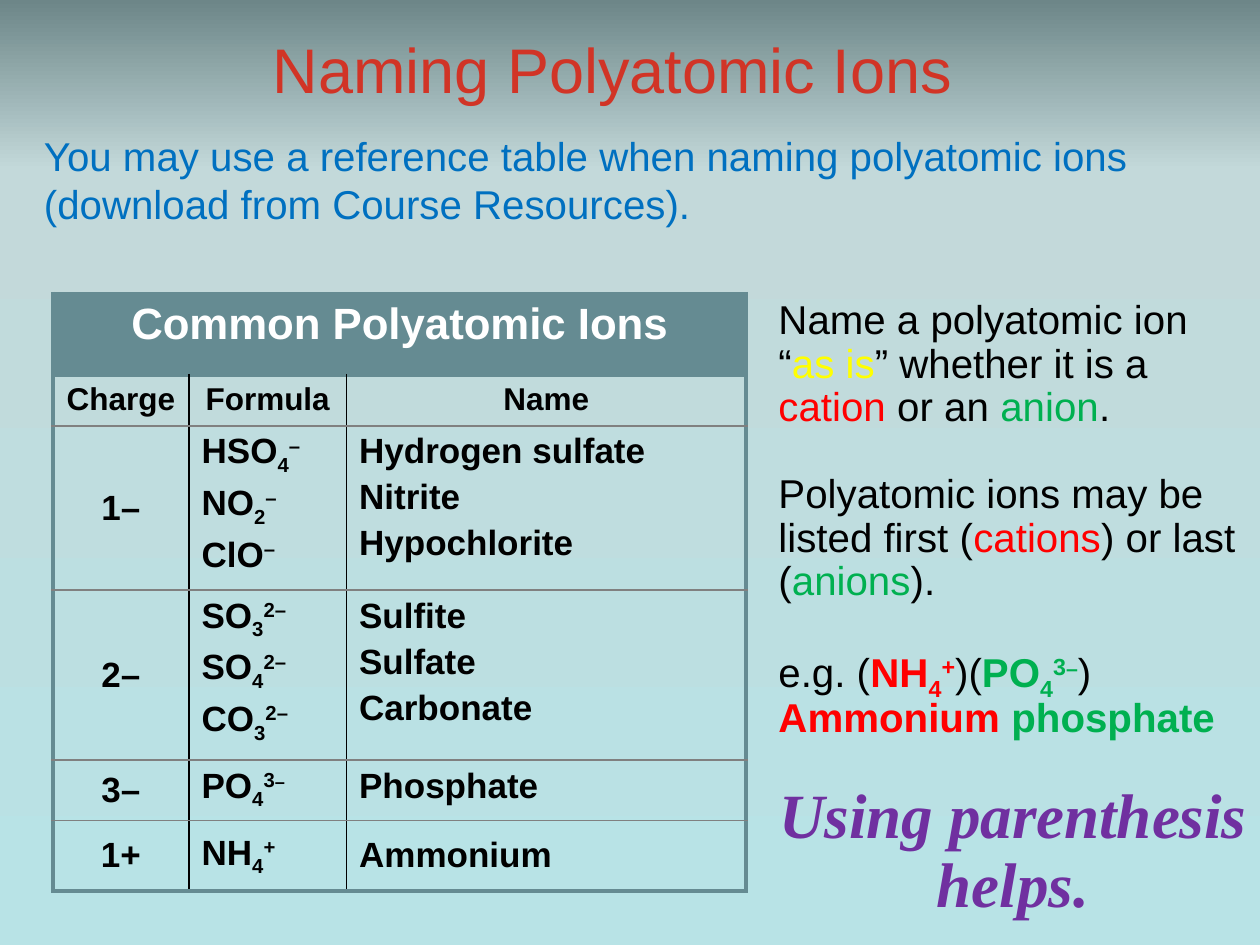
from copy import deepcopy

from pptx import Presentation
from pptx.dml.color import RGBColor
from pptx.enum.text import MSO_ANCHOR, PP_ALIGN
from pptx.oxml.ns import qn
from pptx.oxml.xmlchemy import OxmlElement
from pptx.util import Inches, Pt

COLORS = {
    "title": "D13426", "intro": "0070C0", "text": "000000", "white": "FFFFFF",
    "as_is": "FFFF00", "cation": "FF0000", "anion": "00B050", "tip": "7030A0",
    "frame": "658B92", "rule": "808080",
}
BACKGROUND = [(0, "6D8688"), (0.18, "C3D9DA"), (1, "B8E3E6")]
SUB, SUP = -25, 30
CENTER, LEFT = PP_ALIGN.CENTER, PP_ALIGN.LEFT

COLUMNS = [1.08, 1.25, 3.17]
ROWS = [0.65, 0.4, 1.23, 1.23, 0.43, 0.56]
HEADINGS = ["Charge", "Formula", "Name"]
# Charge, then (base, subscript, superscript parts) and name of each ion
IONS = [
    ("1–", [("HSO", "4", "–"), ("NO", "2", "–"), ("ClO", "", "–")],
     ["Hydrogen sulfate", "Nitrite", "Hypochlorite"]),
    ("2–", [("SO", "3", "2–"), ("SO", "4", "2–"), ("CO", "3", "2–")],
     ["Sulfite", "Sulfate", "Carbonate"]),
    ("3–", [("PO", "4", "3", "–")], ["Phosphate"]),
    ("1+", [("NH", "4", "+")], ["Ammonium"]),
]


def add_run(p, text, size, color="text", bold=False, italic=False, base=0, font="Arial"):
    r = p.add_run()
    r.text = text
    r.font.name = font
    r.font.size = Pt(size)
    r.font.bold = bold
    r.font.italic = italic
    r.font.color.rgb = RGBColor.from_string(COLORS[color])
    if base:
        r.font._element.set("baseline", str(base * 1000))


def add_formula(p, parts, size, sign_size, color="text"):
    symbol, count, charge, *sign = parts
    add_run(p, symbol, size, color, bold=True)
    if count:
        add_run(p, count, size, color, bold=True, base=SUB)
    add_run(p, charge, size, color, bold=True, base=SUP)
    for text in sign:
        add_run(p, text, sign_size, color, bold=True, base=SUP)


def next_paragraph(tf, align=LEFT):
    p = tf.paragraphs[0] if not tf.paragraphs[0].runs else tf.add_paragraph()
    p.alignment = align
    return p


def add_text_box(slide, left, top, width, height, anchor=MSO_ANCHOR.TOP):
    box = slide.shapes.add_textbox(Inches(left), Inches(top), Inches(width), Inches(height))
    tf = box.text_frame
    tf.word_wrap = True
    tf.vertical_anchor = anchor
    return tf


def set_background(slide):
    fill = slide.background.fill
    fill.gradient()
    fill.gradient_angle = 270
    stop_list = slide.element.find(".//" + qn("a:gsLst"))
    stop_list.append(deepcopy(stop_list[-1]))
    for stop, (position, color) in zip(fill.gradient_stops, BACKGROUND):
        stop.position = position
        stop.color.rgb = RGBColor.from_string(color)


def set_borders(cell, **sides):
    """Draw each side, given as (colour, width), in left-right-top-bottom order."""
    tc_pr = cell._tc.get_or_add_tcPr()
    for index, side in enumerate("LRTB"):
        color, width = sides[side]
        ln = OxmlElement(f"a:ln{side}")
        ln.set("w", str(Pt(width)))
        fill = OxmlElement("a:solidFill")
        rgb = OxmlElement("a:srgbClr")
        rgb.set("val", COLORS[color])
        fill.append(rgb)
        ln.append(fill)
        tc_pr.insert(index, ln)


def cell_paragraph(cell, align=LEFT):
    """Start a paragraph with a fifth of a line above it."""
    p = next_paragraph(cell.text_frame, align)
    space = OxmlElement("a:spcBef")
    percent = OxmlElement("a:spcPct")
    percent.set("val", "20000")
    space.append(percent)
    p._p.get_or_add_pPr().append(space)
    return p


def style_cells(table):
    frame, column, rule = ("frame", 2.25), ("text", 1), ("rule", 1)
    last_row, last_col = len(ROWS) - 1, len(COLUMNS) - 1
    for row in range(len(ROWS)):
        for col in range(len(COLUMNS)):
            cell = table.cell(row, col)
            if row == 0:
                cell.fill.solid()
                cell.fill.fore_color.rgb = RGBColor.from_string(COLORS["frame"])
                set_borders(cell, L=frame, R=frame, T=frame, B=frame)
                continue
            cell.fill.background()
            set_borders(cell,
                        L=frame if col == 0 else column,
                        R=frame if col == last_col else column,
                        T=frame if row == 1 else rule,
                        B=frame if row == last_row else rule)
            if row > 1 and (col == 0 or row == last_row):
                cell.vertical_anchor = MSO_ANCHOR.MIDDLE


def add_ion_table(slide):
    shape = slide.shapes.add_table(len(ROWS), len(COLUMNS), Inches(0.42), Inches(2.33),
                                   Inches(sum(COLUMNS)), Inches(sum(ROWS)))
    table = shape.table
    table.first_row = table.horz_banding = False
    for column, width in zip(table.columns, COLUMNS):
        column.width = Inches(width)
    for row, height in zip(table.rows, ROWS):
        row.height = Inches(height)
    style_cells(table)

    # Heading rows
    table.cell(0, 0).merge(table.cell(0, 2))
    add_run(cell_paragraph(table.cell(0, 0), CENTER), "Common Polyatomic Ions",
            25, "white", bold=True)
    for col, heading in enumerate(HEADINGS):
        add_run(cell_paragraph(table.cell(1, col), CENTER), heading, 18, bold=True)

    # One row per charge
    for row, (charge, formulas, names) in enumerate(IONS, start=2):
        add_run(cell_paragraph(table.cell(row, 0), CENTER), charge, 20, bold=True)
        for parts in formulas:
            add_formula(cell_paragraph(table.cell(row, 1)), parts, 20, 18)
        for name in names:
            add_run(cell_paragraph(table.cell(row, 2)), name, 20, bold=True)


def add_notes_column(slide):
    tf = add_text_box(slide, 6.08, 2.33, 3.92, 5.08)
    size, gap = 23, 25

    def paragraph(before=0, align=LEFT):
        p = next_paragraph(tf, align)
        p.line_spacing = 0.9
        p.space_before = Pt(before)
        return p

    def add_sentence(p, *runs):
        for text, color in runs:
            add_run(p, text, size, color)

    add_sentence(paragraph(), ("Name a polyatomic ion “", "text"), ("as is", "as_is"),
                 ("” whether it is a ", "text"), ("cation", "cation"),
                 (" or an ", "text"), ("anion", "anion"), (".", "text"))
    add_sentence(paragraph(gap), ("Polyatomic ions may be listed first (", "text"),
                 ("cations", "cation"), (") or last (", "text"),
                 ("anions", "anion"), (").", "text"))

    # Worked example
    p = paragraph(gap)
    add_run(p, "e.g. (", size)
    add_formula(p, ("NH", "4", "+"), size, 21, "cation")
    add_run(p, ")(", size)
    add_formula(p, ("PO", "4", "3", "–"), size, 21, "anion")
    add_run(p, ")", size)
    p = paragraph()
    add_run(p, "Ammonium ", size, "cation", bold=True)
    add_run(p, "phosphate", size, "anion", bold=True)

    # Tip
    add_run(paragraph(gap, CENTER), "Using parenthesis helps.", 36, "tip",
            bold=True, italic=True, font="Times New Roman")


def main():
    prs = Presentation()
    prs.slide_width, prs.slide_height = Inches(10), Inches(7.5)
    slide = prs.slides.add_slide(prs.slide_layouts[6])
    set_background(slide)

    add_notes_column(slide)
    add_ion_table(slide)

    # Introduction and title
    tf = add_text_box(slide, 0.25, 0.99, 9.42, 1.26)
    add_run(next_paragraph(tf), "You may use a reference table when naming polyatomic ions "
            "(download from Course Resources).", 23, "intro")
    tf = add_text_box(slide, 1.82, 0.17, 6.08, 0.74, MSO_ANCHOR.MIDDLE)
    add_run(next_paragraph(tf, CENTER), "Naming Polyatomic Ions", 36, "title")

    prs.save("out.pptx")


if __name__ == "__main__":
    main()
